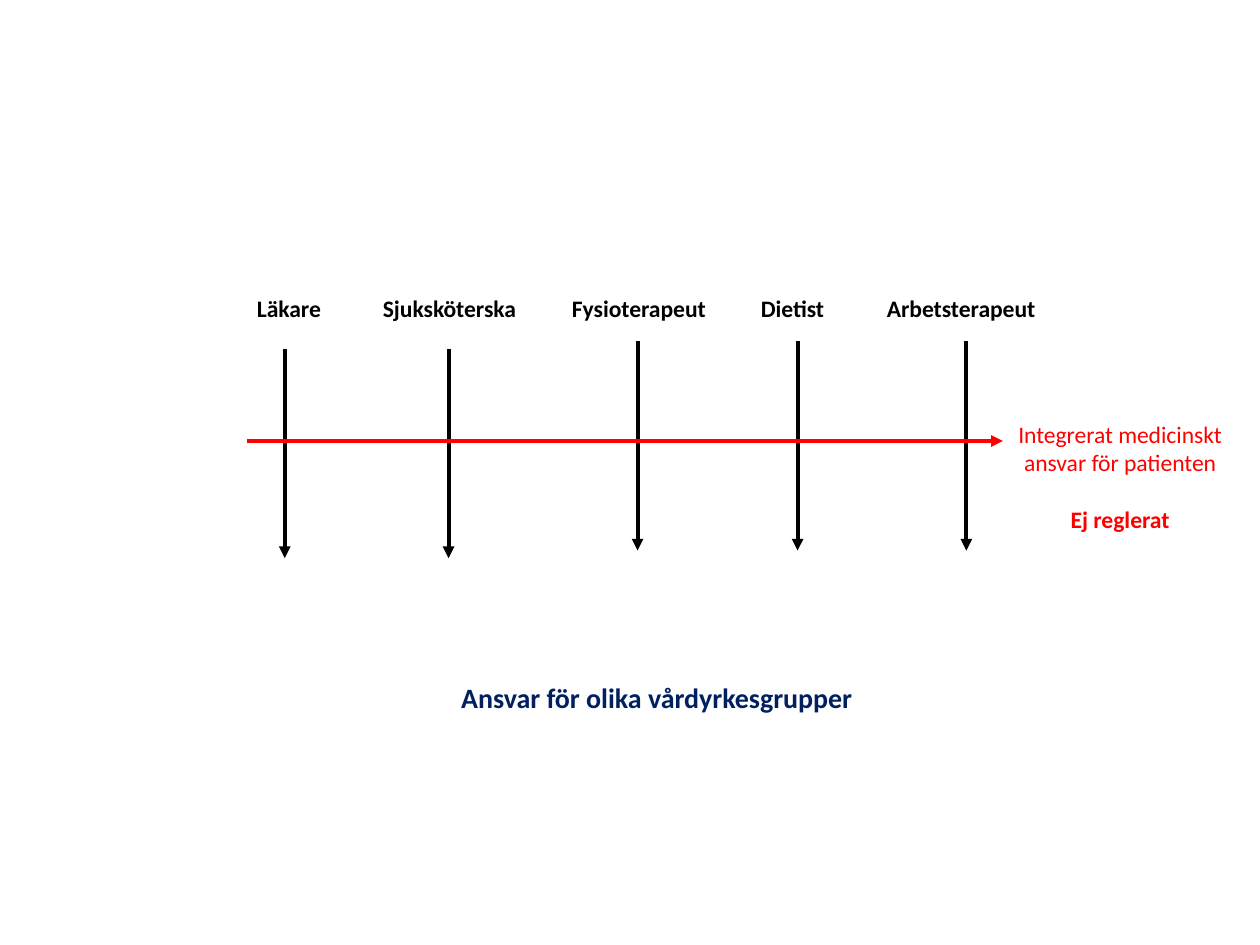
from lxml import etree
from pptx import Presentation
from pptx import util as u
from pptx.dml.color import RGBColor
from pptx.enum import shapes, text
from pptx.oxml.ns import qn

FONT = "Calibri"
BLACK, RED, NAVY = "000000", "FF0000", "002060"
HEADING = "Ansvar för olika vårdyrkesgrupper"
PROFESSIONS = ["Läkare", "Sjuksköterska", "Fysioterapeut", "Dietist", "Arbetsterapeut"]
TAB_STOPS = [1, 2.5, 4, 5]
DUTY_ARROWS = [(2.26, 2.77), (3.56, 2.77), (5.06, 2.71), (6.33, 2.71), (7.67, 2.71)]
DUTY_LENGTH = 1.66
SHARED_DUTY = [("Integrerat medicinskt", False, 0),
               ("ansvar för patienten", False, 0),
               ("Ej reglerat", True, 16.5)]


def color(value):
    return RGBColor.from_string(value)


def style(paragraph, size, value, bold, align=text.PP_ALIGN.LEFT):
    paragraph.alignment = align
    font = paragraph.font
    font.name, font.size, font.bold = FONT, u.Pt(size), bold
    font.color.rgb = color(value)


def add_box(slide, left, top, width, height, wrap):
    box = slide.shapes.add_textbox(*map(u.Inches, (left, top, width, height)))
    box.text_frame.word_wrap = wrap
    return box.text_frame


def add_arrow(slide, x1, y1, x2, y2, value):
    arrow = slide.shapes.add_connector(
        shapes.MSO_CONNECTOR.STRAIGHT, *map(u.Inches, (x1, y1, x2, y2)))
    arrow.line.color.rgb = color(value)
    arrow.line.width = u.Pt(2.25)
    etree.SubElement(arrow.line._get_or_add_ln(), qn("a:tailEnd"), type="triangle")
    etree.SubElement(arrow._element.spPr, qn("a:effectLst"))


def main():
    deck = Presentation()
    deck.slide_width, deck.slide_height = u.Inches(10), u.Inches(7.5)
    slide = deck.slides.add_slide(deck.slide_layouts[5])

    professions = add_box(slide, 1.94, 2.28, 7.31, 2.6, True).paragraphs[0]
    professions.text = "\t".join(PROFESSIONS)
    tabs = etree.SubElement(professions._p.get_or_add_pPr(), qn("a:tabLst"))
    for stop in TAB_STOPS:
        etree.SubElement(tabs, qn("a:tab"), pos=str(u.Inches(stop)), algn="l")
    style(professions, 13.5, BLACK, True)

    for x, top in DUTY_ARROWS:
        add_arrow(slide, x, top, x, top + DUTY_LENGTH, BLACK)

    heading = slide.shapes.title
    heading.left, heading.top, heading.width, heading.height = map(
        u.Inches, (3.56, 5.35, 3.46, 0.37))
    heading.text_frame.text = HEADING
    heading.text_frame.auto_size = text.MSO_AUTO_SIZE.NONE
    heading.text_frame.vertical_anchor = text.MSO_ANCHOR.TOP
    style(heading.text_frame.paragraphs[0], 16, NAVY, True)

    add_arrow(slide, 1.96, 3.5, 7.96, 3.5, RED)

    shared = add_box(slide, 7.97, 3.28, 1.84, 1.01, False)
    for i, (line, bold, gap) in enumerate(SHARED_DUTY):
        paragraph = shared.add_paragraph() if i else shared.paragraphs[0]
        paragraph.text = line
        if gap:
            paragraph.space_before = u.Pt(gap)
        style(paragraph, 13.5, RED, bold, text.PP_ALIGN.CENTER)

    deck.save("out.pptx")


if __name__ == "__main__":
    main()
